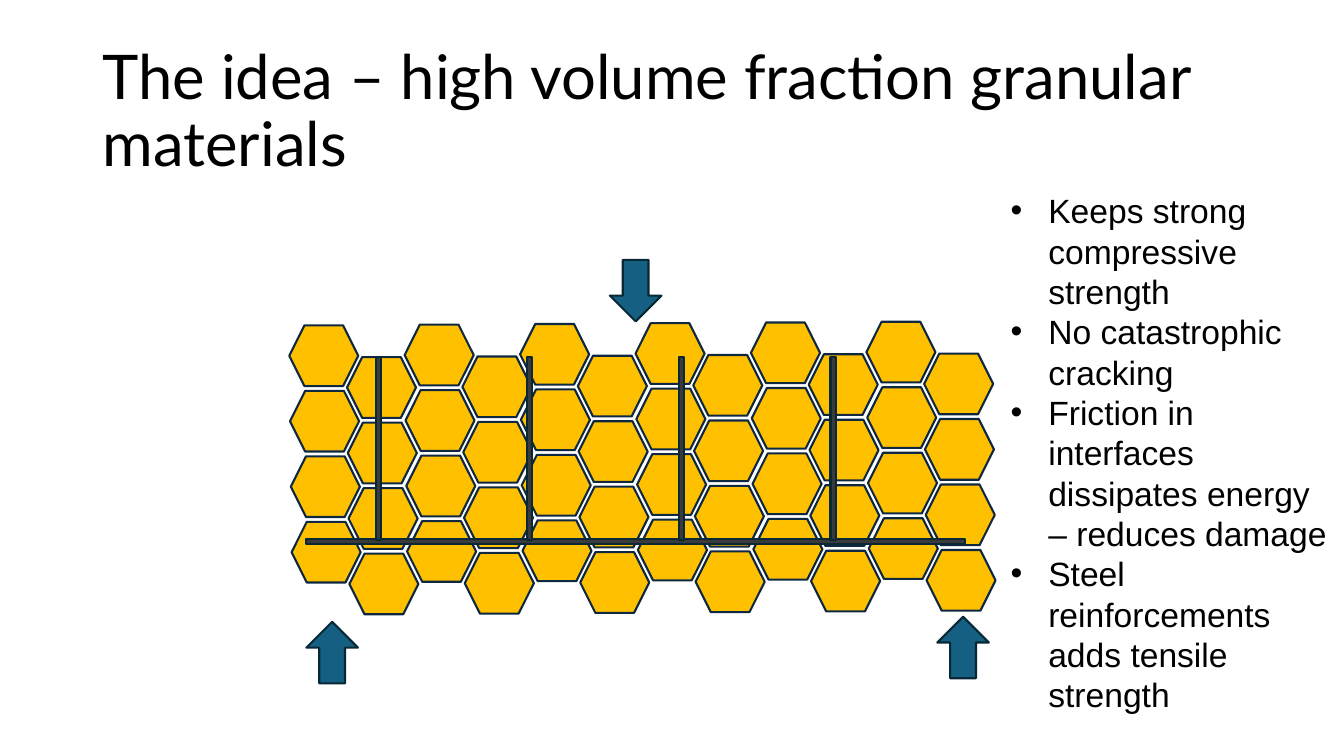
from lxml import etree
from pptx import Presentation
from pptx import util as u
from pptx.dml.color import RGBColor
from pptx.enum import shapes, text
from pptx.oxml import ns

BLACK = RGBColor(0x00, 0x00, 0x00)
GRAIN_FILL = RGBColor(0xFF, 0xC0, 0x00)
GRAIN_LINE = RGBColor(0x0E, 0x28, 0x41)
ARROW_FILL = RGBColor(0x15, 0x60, 0x82)
STEEL_FILL = RGBColor(0x3A, 0x3A, 0x3A)
DARK_LINE = RGBColor(0x08, 0x28, 0x36)

TITLE = "The idea – high volume fraction granular materials"
POINTS = [
    "Keeps strong compressive strength",
    "No catastrophic cracking",
    "Friction in interfaces dissipates energy – reduces damage",
    "Steel reinforcements adds tensile strength",
]

# All lengths are in centimetres; boxes are left, top, width, height.
SLIDE_SIZE = (33.87, 19.05)
TITLE_BOX = (2.33, 1.01, 29.21, 3.68)
POINTS_BOX = (25.22, 4.67, 8.58, 14.63)
BULLET_INDENT = 0.95

GRAIN_COLUMNS, GRAIN_ROWS = 12, 4
GRAIN_SIZE = (1.74, 1.53)
GRAIN_ORIGIN = (7.29, 8.2)
GRAIN_SPAN = 16      # first to last column
GRAIN_RISE = 0.1     # upward tilt over that span
ROW_PITCH = 1.65
ROW_DRIFT = 0.02     # rightward tilt per row
ODD_COLUMN_DROP = 0.81

ARROW_SIZE = (1.3, 1.55)
ARROWS = [(15.37, 6.55, 0), (7.72, 15.67, 180), (23.62, 15.54, 180)]  # left, top, rotation

BAR_THICKNESS = 0.13
LONG_BAR = (7.72, 13.59, 16.61, BAR_THICKNESS)
STIRRUP_COUNT, STIRRUP_PITCH = 4, 3.82
STIRRUP_ORIGIN, STIRRUP_LENGTH = (9.47, 9.0), 4.6


def set_values(target, values):
    for name, value in values.items():
        setattr(target, name, value)


def in_cm(box):
    return [u.Cm(value) for value in box]


def add_part(slide, kind, box, fill, line, rotation=0):
    shape = slide.shapes.add_shape(kind, *in_cm(box))
    shape.shadow.inherit = False
    shape.rotation = rotation
    shape.fill.solid()
    shape.fill.fore_color.rgb = fill
    shape.line.color.rgb = line
    shape.line.width = u.Pt(1.5)


def add_title(slide):
    title = slide.shapes.title
    set_values(title, dict(zip(("left", "top", "width", "height"), in_cm(TITLE_BOX))))
    title.text_frame.text = TITLE
    set_values(title.text_frame, {
        "word_wrap": True,
        "auto_size": text.MSO_AUTO_SIZE.NONE,
        "vertical_anchor": text.MSO_ANCHOR.MIDDLE,
    })
    paragraph = title.text_frame.paragraphs[0]
    set_values(paragraph, {"alignment": text.PP_ALIGN.LEFT, "line_spacing": 0.9})
    set_values(paragraph.font, {"name": "Lato", "size": u.Pt(44)})
    paragraph.font.color.rgb = BLACK


def add_points(slide):
    frame = slide.shapes.add_textbox(*in_cm(POINTS_BOX)).text_frame
    set_values(frame, {"word_wrap": True, "auto_size": text.MSO_AUTO_SIZE.SHAPE_TO_FIT_TEXT})
    frame.text = "\n".join(POINTS)
    for paragraph in frame.paragraphs:
        properties = paragraph._p.get_or_add_pPr()
        properties.set("marL", str(u.Cm(BULLET_INDENT)))
        properties.set("indent", str(-u.Cm(BULLET_INDENT)))
        etree.SubElement(properties, ns.qn("a:buFont"), typeface="Arial")
        etree.SubElement(properties, ns.qn("a:buChar"), char="•")
        set_values(paragraph.font, {"name": "Arial", "size": u.Pt(24)})
        paragraph.font.color.rgb = BLACK


def add_grains(slide):
    left, top = GRAIN_ORIGIN
    for column in range(GRAIN_COLUMNS):
        progress = column / (GRAIN_COLUMNS - 1)
        for row in range(GRAIN_ROWS):
            x = left + GRAIN_SPAN * progress + ROW_DRIFT * row
            y = top - GRAIN_RISE * progress + ROW_PITCH * row + ODD_COLUMN_DROP * (column % 2)
            add_part(slide, shapes.MSO_SHAPE.HEXAGON, (x, y, *GRAIN_SIZE), GRAIN_FILL, GRAIN_LINE)


def add_loads(slide):
    for left, top, rotation in ARROWS:
        add_part(slide, shapes.MSO_SHAPE.DOWN_ARROW, (left, top, *ARROW_SIZE),
                 ARROW_FILL, DARK_LINE, rotation)


def add_reinforcement(slide):
    left, top = STIRRUP_ORIGIN
    stirrups = [(left + STIRRUP_PITCH * index, top, BAR_THICKNESS, STIRRUP_LENGTH)
                for index in range(STIRRUP_COUNT)]
    for bar in [LONG_BAR, *stirrups]:
        add_part(slide, shapes.MSO_SHAPE.RECTANGLE, bar, STEEL_FILL, DARK_LINE)


def main():
    presentation = Presentation()
    presentation.slide_width, presentation.slide_height = in_cm(SLIDE_SIZE)
    slide = presentation.slides.add_slide(presentation.slide_layouts[5])
    add_title(slide)
    add_points(slide)
    add_grains(slide)
    add_loads(slide)
    add_reinforcement(slide)
    presentation.save("out.pptx")


if __name__ == "__main__":
    main()
